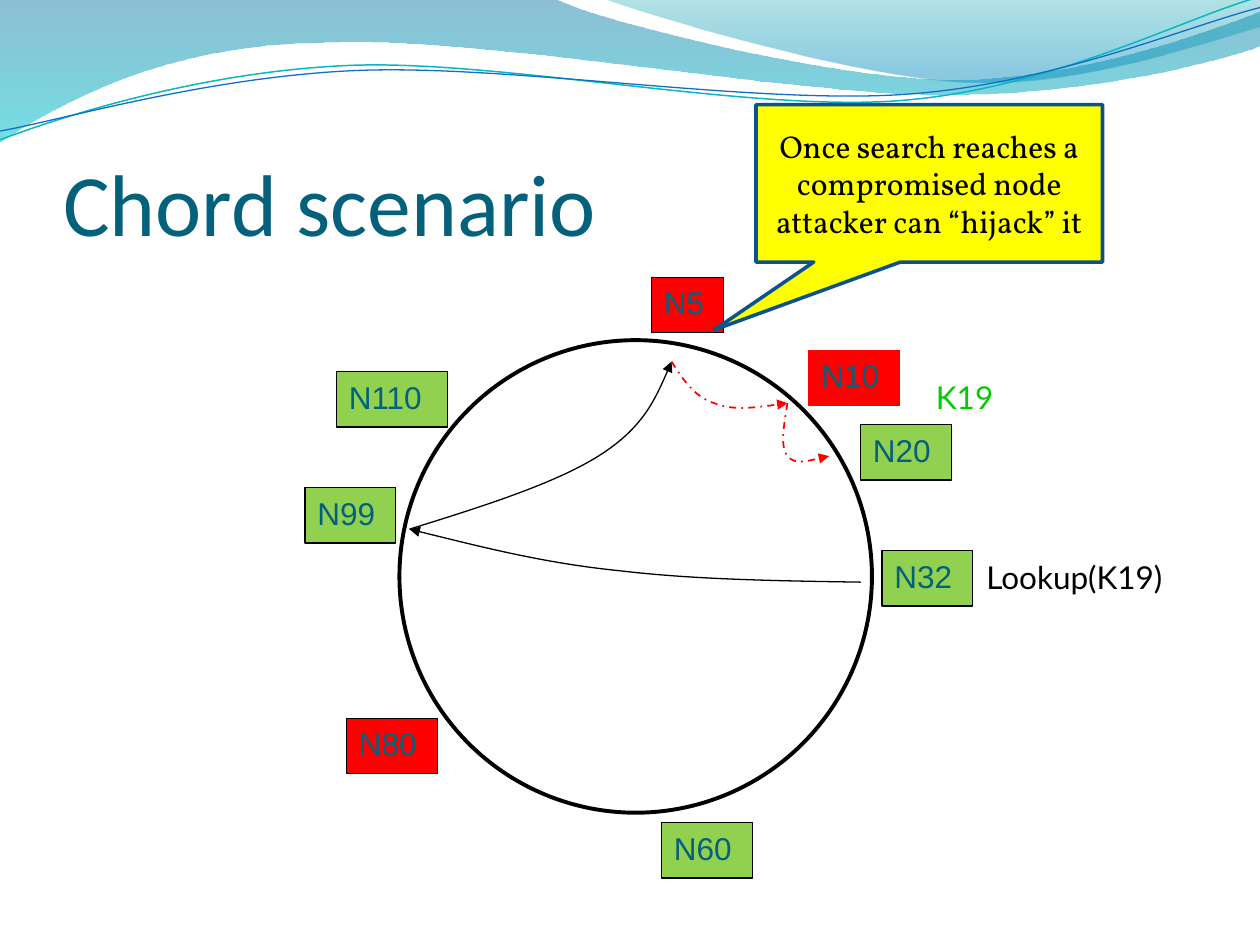
from dataclasses import dataclass

from lxml import etree
from pptx import Presentation
from pptx.dml.color import RGBColor
from pptx.enum.dml import MSO_LINE
from pptx.enum.shapes import MSO_SHAPE as Shape
from pptx.enum.text import MSO_ANCHOR as Anchor, PP_ALIGN as Align
from pptx.oxml.ns import qn
from pptx.util import Inches, Pt


@dataclass(frozen=True)
class Theme:
    title: str = "04617B"
    ink: str = "000000"
    honest: str = "92D050"
    compromised: str = "FF0000"
    key: str = "00CC00"
    callout: str = "FFFF00"
    callout_edge: str = "0B5292"
    teal_wave: str = "0AB8BF"
    blue_wave: str = "0F6FC6"
    title_size: int = 50
    body_size: int = 18


theme = Theme()
rgb = RGBColor.from_string


def add_text(frame, text, font, color, size=theme.body_size, align=Align.LEFT):
    frame.word_wrap = True
    paragraph = frame.paragraphs[0]
    paragraph.alignment = align
    run = paragraph.add_run()
    run.text = text
    run.font.name, run.font.size = font, Pt(size)
    run.font.color.rgb = rgb(color)


def add_curve(start, segments, color=None, width=0.75, closed=False):
    """Draw segments of one point (line) or three points (Bézier curve)."""
    points = [(Inches(x), Inches(y)) for segment in segments for x, y in segment]
    builder = slide.shapes.build_freeform(Inches(start[0]), Inches(start[1]))
    builder.add_line_segments(points, close=closed)
    curve = builder.convert_to_shape()
    curve.shadow.inherit = False
    lines = iter(list(curve._element.iter(qn("a:lnTo"))))
    for segment in segments:
        steps = [next(lines) for _ in segment]
        if len(steps) == 3:
            bezier = etree.Element(qn("a:cubicBezTo"))
            steps[0].addprevious(bezier)
            for step in steps:
                bezier.append(step[0])
                step.getparent().remove(step)
    if color:
        curve.fill.background()
        curve.line.color.rgb = rgb(color)
        curve.line.width = Pt(width)
    else:
        curve.line.fill.background()
    return curve


prs = Presentation()
prs.slide_width, prs.slide_height = Inches(10), Inches(7.5)
slide = prs.slides.add_slide(prs.slide_layouts[5])

# Gradient bands along the top: start, segments, stops (position, colour, opacity %)
bands = [
    ((0, -0.01),
     [[(4.4, -0.01)],
      [(4.76, 0.17), (6.64, 0.63), (7.58, 0.63)],
      [(8.53, 0.63), (9.58, 0.26), (10, 0.09)],
      [(10.01, 0.36)],
      [(9.83, 0.44), (8.7, 0.76), (7.46, 0.75)],
      [(6.22, 0.75), (3.82, 0.28), (2.57, 0.34)],
      [(1.29, 0.35), (0.46, 0.83), (-0.01, 1.13)]],
     [(0, "0074A1", 45), (1, "00C6CF", 55)]),
    ((4.79, -0.01),
     [[(5.09, 0.11), (6.82, 0.62), (7.69, 0.65)],
      [(8.56, 0.69), (9.61, 0.32), (10, 0.21)],
      [(10, 0)]],
     [(0, "00A1A9", 30), (0.8, "008BBF", 45)]),
]
for start, segments, stops in bands:
    band = add_curve(start, segments, closed=True)
    band.fill.gradient()
    band.fill.gradient_angle = 270
    for stop, (position, color, _) in zip(band.fill.gradient_stops, stops):
        stop.position = position
        stop.color.rgb = rgb(color)
    for node, (_, _, opacity) in zip(band._element.iter(qn("a:srgbClr")), stops):
        etree.SubElement(node, qn("a:alpha"), val=str(opacity * 1000))

# Thin wave lines
add_curve((0, 1.11),
          [[(0.48, 0.93), (1.58, 0.57), (2.77, 0.52)],
           [(3.95, 0.47), (5.93, 0.89), (7.13, 0.8)],
           [(8.33, 0.71), (9.38, 0.15), (9.98, -0.02)]],
          theme.teal_wave, 0.85)
add_curve((0, 1.04),
          [[(0.47, 0.96), (1.64, 0.61), (2.83, 0.56)],
           [(4.03, 0.51), (5.97, 0.83), (7.17, 0.75)],
           [(8.36, 0.67), (9.41, 0.21), (10, 0.06)]],
          theme.blue_wave)

# Title
title = slide.shapes.title
title.left, title.top = Inches(0.5), Inches(0.77)
title.width, title.height = Inches(9.08), Inches(1.25)
heading = title.text_frame
heading.vertical_anchor = Anchor.BOTTOM
heading.margin_left = heading.margin_right = heading.margin_bottom = 0
add_text(heading, "Chord scenario", "Calibri", theme.title, theme.title_size)

# Identifier ring
ring = slide.shapes.add_shape(Shape.OVAL, Inches(3.17), Inches(2.7),
                              Inches(3.75), Inches(3.75))
ring.shadow.inherit = False
ring.fill.background()
ring.line.color.rgb = rgb(theme.ink)
ring.line.width = Pt(2.25)

# Nodes: name, left, top, width, fill, edge
nodes = [
    ("N32", 7, 4.37, 0.72, theme.honest, theme.ink),
    ("N10", 6.42, 2.78, 0.72, theme.compromised, theme.compromised),
    ("N5", 5.17, 2.2, 0.57, theme.compromised, theme.ink),
    ("N20", 6.83, 3.37, 0.72, theme.honest, theme.ink),
    ("N110", 2.67, 2.95, 0.88, theme.honest, theme.ink),
    ("N99", 2.42, 3.87, 0.72, theme.honest, theme.ink),
    ("N80", 2.75, 5.7, 0.72, theme.compromised, theme.ink),
    ("N60", 5.25, 6.53, 0.72, theme.honest, theme.ink),
]
for name, left, top, width, fill, edge in nodes:
    node = slide.shapes.add_shape(Shape.RECTANGLE, Inches(left), Inches(top),
                                  Inches(width), Inches(0.44))
    node.shadow.inherit = False
    node.fill.solid()
    node.fill.fore_color.rgb = rgb(fill)
    node.line.color.rgb = rgb(edge)
    node.line.width = Pt(0.75)
    node.text_frame.vertical_anchor = Anchor.TOP
    add_text(node.text_frame, name, "Arial", theme.title)

# Lookup hops; those after the compromised node are dashed red
hops = [
    ((6.83, 4.62), [[(6.17, 4.61), (5.51, 4.6), (4.92, 4.53)],
                    [(4.32, 4.47), (3.78, 4.33), (3.25, 4.2)]], False),
    ((3.25, 4.2), [[(3.83, 4.02), (4.4, 3.84), (4.75, 3.62)],
                   [(5.1, 3.4), (5.22, 3.13), (5.33, 2.87)]], False),
    ((5.33, 2.87), [[(5.42, 3.01), (5.51, 3.15), (5.67, 3.2)],
                    [(5.82, 3.26), (6.03, 3.23), (6.25, 3.2)]], True),
    ((6.25, 3.2), [[(6.22, 3.38), (6.19, 3.55), (6.25, 3.62)],
                   [(6.31, 3.69), (6.44, 3.65), (6.58, 3.62)]], True),
]
for start, segments, hijacked in hops:
    hop = add_curve(start, segments,
                    theme.compromised if hijacked else theme.ink,
                    1 if hijacked else 0.75)
    if hijacked:
        hop.line.dash_style = MSO_LINE.DASH_DOT
    etree.SubElement(hop.line._get_or_add_ln(), qn("a:tailEnd"), type="triangle")

# Key labels
for label, left, top, width, color in [
    ("Lookup(K19)", 7.73, 4.38, 1.77, theme.ink),
    ("K19", 7.33, 2.95, 0.67, theme.key),
]:
    box = slide.shapes.add_textbox(Inches(left), Inches(top), Inches(width), Inches(0.43))
    add_text(box.text_frame, label, "Lato", color)

# Callout pointing at N5
callout = slide.shapes.add_shape(Shape.RECTANGULAR_CALLOUT, Inches(6), Inches(0.83),
                                 Inches(2.75), Inches(1.25))
callout.adjustments[0], callout.adjustments[1] = -0.62, 0.93
callout.shadow.inherit = False
callout.fill.solid()
callout.fill.fore_color.rgb = rgb(theme.callout)
callout.line.color.rgb = rgb(theme.callout_edge)
callout.line.width = Pt(2)
callout.text_frame.vertical_anchor = Anchor.MIDDLE
add_text(callout.text_frame,
         "Once search reaches a compromised node attacker can “hijack” it",
         "Vollkorn", theme.ink, align=Align.CENTER)

prs.save("out.pptx")
